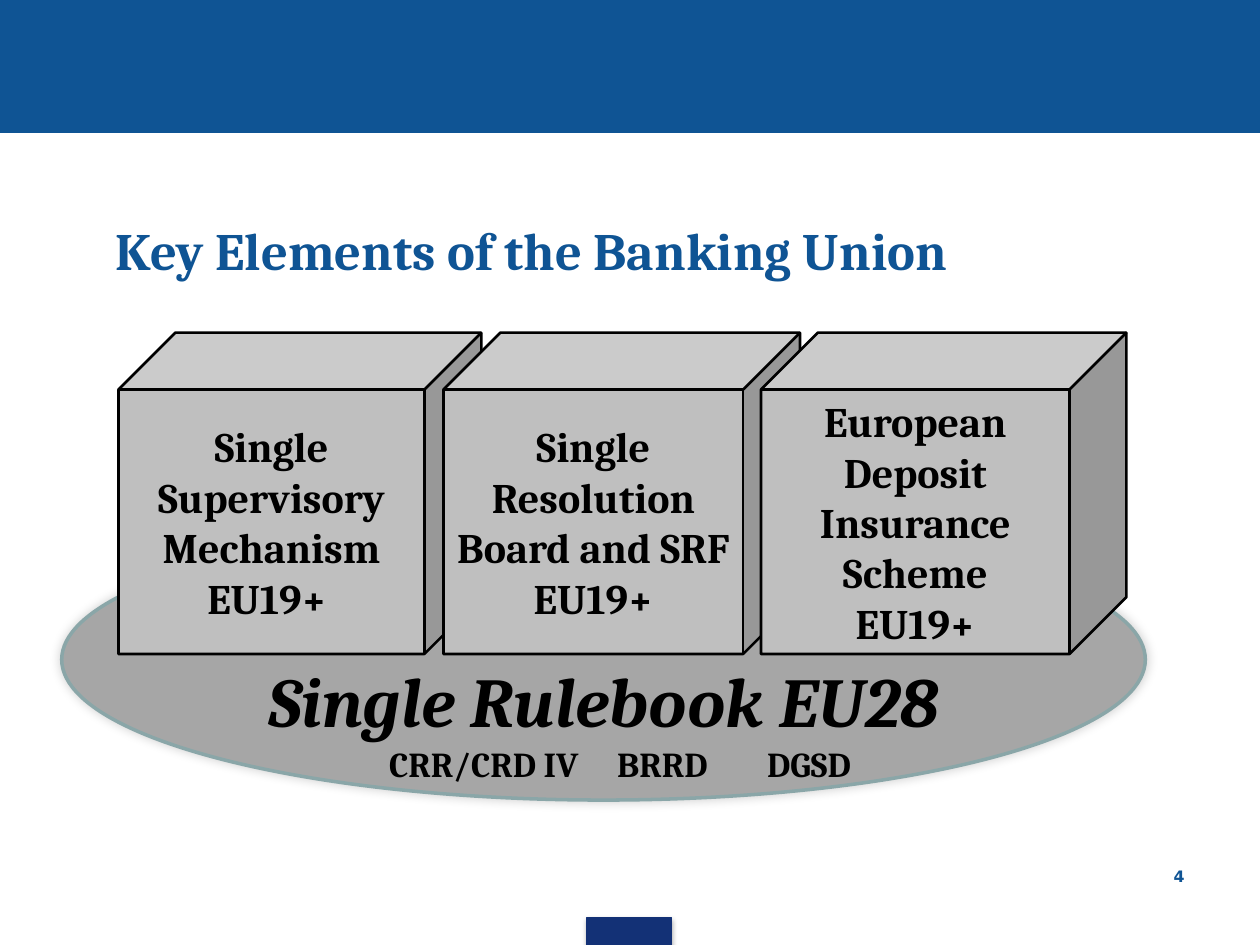
from dataclasses import dataclass
from typing import Any, NamedTuple, Optional

from lxml import etree
from pptx import Presentation
from pptx import util as u
from pptx.dml.color import RGBColor
from pptx.enum import shapes, text
from pptx.oxml import ns

WIDE, HIGH = u.Inches(10), u.Inches(7.5)
COLS, ROWS = 100, 75
KIND = shapes.MSO_SHAPE
ALIGN = text.PP_ALIGN
MID = text.MSO_ANCHOR.MIDDLE


@dataclass(frozen=True)
class Theme:
    blue: str = "0F5494"
    navy: str = "133176"
    ink: str = "000000"
    face: str = "BFBFBF"
    base: str = "A6A6A6"
    rim: str = "8AA6A8"
    serif: str = "Cambria"
    sans: str = "DejaVu Sans"
    head: int = 30
    rule: int = 40
    body: int = 24
    note: int = 20
    page: int = 9


class Area(NamedTuple):
    col: float
    row: float
    cols: float
    rows: float


class Shade(NamedTuple):
    alpha: int
    blur: float
    dist: float
    turn: int


class Pillar(NamedTuple):
    col: float
    cols: float
    lines: tuple[str, ...]


THEME = Theme()
PILLARS = (
    Pillar(9.4, 28.8, ("Single Supervisory Mechanism", "EU19+ ")),
    Pillar(35.2, 28.3, ("Single Resolution Board and SRF", "EU19+")),
    Pillar(60.4, 29, ("European Deposit Insurance Scheme", "EU19+")),
)


def across(cols: float) -> int:
    return round(WIDE * cols / COLS)


def down(rows: float) -> int:
    return round(HIGH * rows / ROWS)


def place(area: Area) -> tuple[int, int, int, int]:
    return across(area.col), down(area.row), across(area.cols), down(area.rows)


def apply(item: Any, form: dict[str, Any]) -> None:
    for key, value in form.items():
        setattr(item, key, value)


def write(shape: Any, lines: tuple[str, ...], size: int, tone: str = THEME.ink,
          align: Any = ALIGN.LEFT, anchor: Any = MID, **style: Any) -> None:
    frame = shape.text_frame
    apply(frame, {"word_wrap": True, "vertical_anchor": anchor})
    form = {"size": u.Pt(size), "name": THEME.serif, "bold": True, **style}
    for spot, line in enumerate(lines):
        para = frame.add_paragraph() if spot else frame.paragraphs[0]
        para.alignment = align
        run = para.add_run()
        run.text = line
        apply(run.font, form)
        run.font.color.rgb = RGBColor.from_string(tone)


def cast(shape: Any, shade: Shade) -> None:
    effects = shape._element.spPr.find(ns.qn("a:effectLst"))
    outer = etree.SubElement(
        effects, ns.qn("a:outerShdw"), blurRad=str(u.Pt(shade.blur)),
        dist=str(u.Pt(shade.dist)), dir=str(shade.turn * 60000), rotWithShape="0")
    color = etree.SubElement(outer, ns.qn("a:srgbClr"), val=THEME.ink)
    etree.SubElement(color, ns.qn("a:alpha"), val=str(shade.alpha * 1000))


def draw(slide: Any, kind: Any, area: Area, fill: str, line: str,
         width: float, shade: Optional[Shade] = None) -> Any:
    shape = slide.shapes.add_shape(kind, *place(area))
    shape.shadow.inherit = False
    shape.fill.solid()
    shape.fill.fore_color.rgb = RGBColor.from_string(fill)
    shape.line.color.rgb = RGBColor.from_string(line)
    shape.line.width = u.Pt(width)
    if shade:
        cast(shape, shade)
    return shape


def stack(slide: Any, pillar: Pillar) -> None:
    area = Area(pillar.col, 26.4, pillar.cols, 25.5)
    cube = draw(slide, KIND.CUBE, area, THEME.face, THEME.ink, 1.5)
    cube.adjustments[0] = 0.177
    write(cube, pillar.lines, THEME.body, align=ALIGN.CENTER)


def set_tabs(para: Any, stops: tuple[float, ...]) -> None:
    tabs = etree.SubElement(para._p.get_or_add_pPr(), ns.qn("a:tabLst"))
    for stop in stops:
        etree.SubElement(tabs, ns.qn("a:tab"), pos=str(across(stop)), algn="l")


def main() -> None:
    deck = Presentation()
    apply(deck, {"slide_width": WIDE, "slide_height": HIGH})
    slide = deck.slides.add_slide(deck.slide_layouts[5])

    draw(slide, KIND.RECTANGLE, Area(0, 0, COLS, 10.5), THEME.blue, THEME.blue, 0.75)
    draw(slide, KIND.RECTANGLE, Area(46.6, 72.8, 6.7, 2.2), THEME.navy, THEME.navy,
         0.75, Shade(35, 3.1, 1.8, 90))

    title = slide.shapes.title
    spots = place(Area(4.3, 14.7, 90, 10.2))
    apply(title, dict(zip(("left", "top", "width", "height"), spots)))
    write(title, ("Key Elements of the Banking Union",), THEME.head, THEME.blue)
    title.text_frame.paragraphs[0]._p.get_or_add_pPr().set("marL", str(across(3.9)))

    page = slide.shapes.add_textbox(*place(Area(71.7, 68.3, 23.3, 5.2)))
    write(page, ("4",), THEME.page, THEME.blue, ALIGN.RIGHT,
          text.MSO_ANCHOR.TOP, name=THEME.sans)

    base = draw(slide, KIND.OVAL, Area(4.9, 41.2, 86, 22.3), THEME.base, THEME.rim,
                2, Shade(20, 6, 0, 225))
    apply(base.text_frame, {"margin_top": 0, "margin_bottom": down(1.4)})
    write(base, ("Single Rulebook EU28",), THEME.rule, align=ALIGN.CENTER,
          anchor=text.MSO_ANCHOR.BOTTOM, italic=True)

    for pillar in PILLARS:
        stack(slide, pillar)

    laws = slide.shapes.add_textbox(*place(Area(29.9, 58.4, 42.8, 4.4)))
    set_tabs(laws.text_frame.paragraphs[0], (18.1, 30))
    write(laws, ("CRR/CRD IV\tBRRD\tDGSD",), THEME.note, anchor=text.MSO_ANCHOR.TOP)

    deck.save("out.pptx")


if __name__ == "__main__":
    main()
